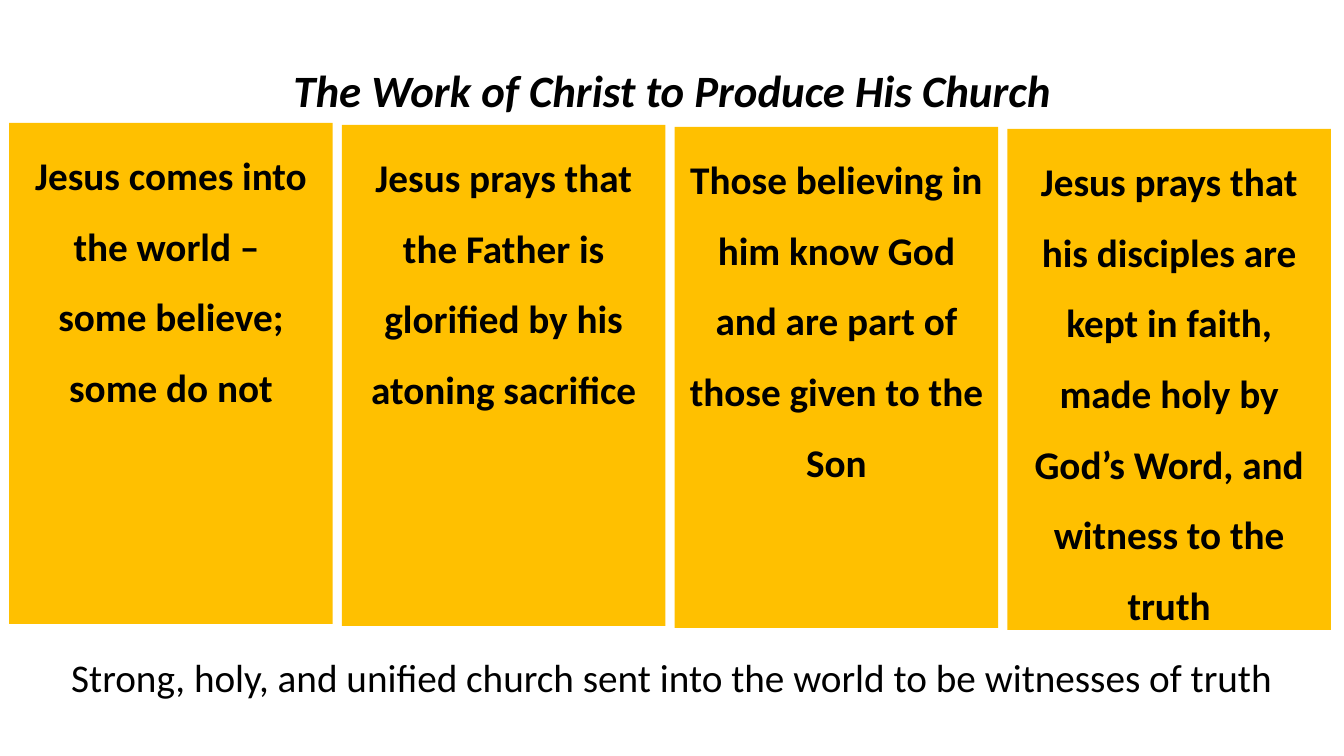
from pptx import Presentation
from pptx.dml.color import RGBColor
from pptx.enum.shapes import MSO_SHAPE
from pptx.enum.text import MSO_ANCHOR, PP_ALIGN
from pptx.util import Inches, Pt

RECTANGLE = MSO_SHAPE.RECTANGLE
TOP = MSO_ANCHOR.TOP
CENTER = PP_ALIGN.CENTER

TITLE = "The Work of Christ to Produce His Church"
STAGES = [
    ["Jesus comes into the world – ", "some believe; some do not"],
    ["Jesus prays that the Father is glorified by his atoning sacrifice"],
    ["Those believing in him know God and are part of those given to the Son"],
    ["Jesus prays that his disciples are kept in faith, made holy by God’s Word, and witness to the truth"],
]
OUTCOME = "Strong, holy, and unified church sent into the world to be witnesses of truth"

FONT = "Calibri"
BLACK = "000000"
GOLD = "FFC000"

SLIDE_WIDTH, SLIDE_HEIGHT = 13.33, 7.5
TITLE_AREA = (2.72, 0.49, 7.9, 0.68)
OUTCOME_AREA = (0.1, 6.36, 13.12, 0.61)
PANEL_LEFT, PANEL_TOP = 0.09, 1.22
PANEL_WIDTH, PANEL_HEIGHT = 3.21, 4.97
COLUMN_STEP, TOP_STEP = 3.3, 0.02


def color(value):
    return RGBColor.from_string(value)


def write(box, lines, size, spacing, bold=False, italic=False, before=0):
    frame = box.text_frame
    frame.word_wrap = True
    frame.vertical_anchor = TOP
    for index, line in enumerate(lines):
        para = frame.add_paragraph() if index else frame.paragraphs[0]
        para.alignment = CENTER
        para.line_spacing = spacing
        para.space_before = Pt(before)
        span = para.add_run()
        span.text = line
        span.font.name = FONT
        span.font.size = Pt(size)
        span.font.bold = bold
        span.font.italic = italic
        span.font.color.rgb = color(BLACK)


def add_panel(page, column, lines):
    area = (PANEL_LEFT + column * COLUMN_STEP, PANEL_TOP + column * TOP_STEP,
            PANEL_WIDTH, PANEL_HEIGHT)
    panel = page.shapes.add_shape(RECTANGLE, *map(Inches, area))
    panel.shadow.inherit = False
    panel.fill.solid()
    panel.fill.fore_color.rgb = color(GOLD)
    panel.line.fill.background()
    write(panel, lines, 28, 1.5, bold=True)


def main():
    deck = Presentation()
    deck.slide_width = Inches(SLIDE_WIDTH)
    deck.slide_height = Inches(SLIDE_HEIGHT)
    page = deck.slides.add_slide(deck.slide_layouts[6])

    title = page.shapes.add_textbox(*map(Inches, TITLE_AREA))
    write(title, [TITLE], 32, 1.15, bold=True, italic=True, before=12)

    for column, lines in enumerate(STAGES):
        add_panel(page, column, lines)

    outcome = page.shapes.add_textbox(*map(Inches, OUTCOME_AREA))
    write(outcome, [OUTCOME], 28, 1.15)

    deck.save("out.pptx")


if __name__ == "__main__":
    main()
